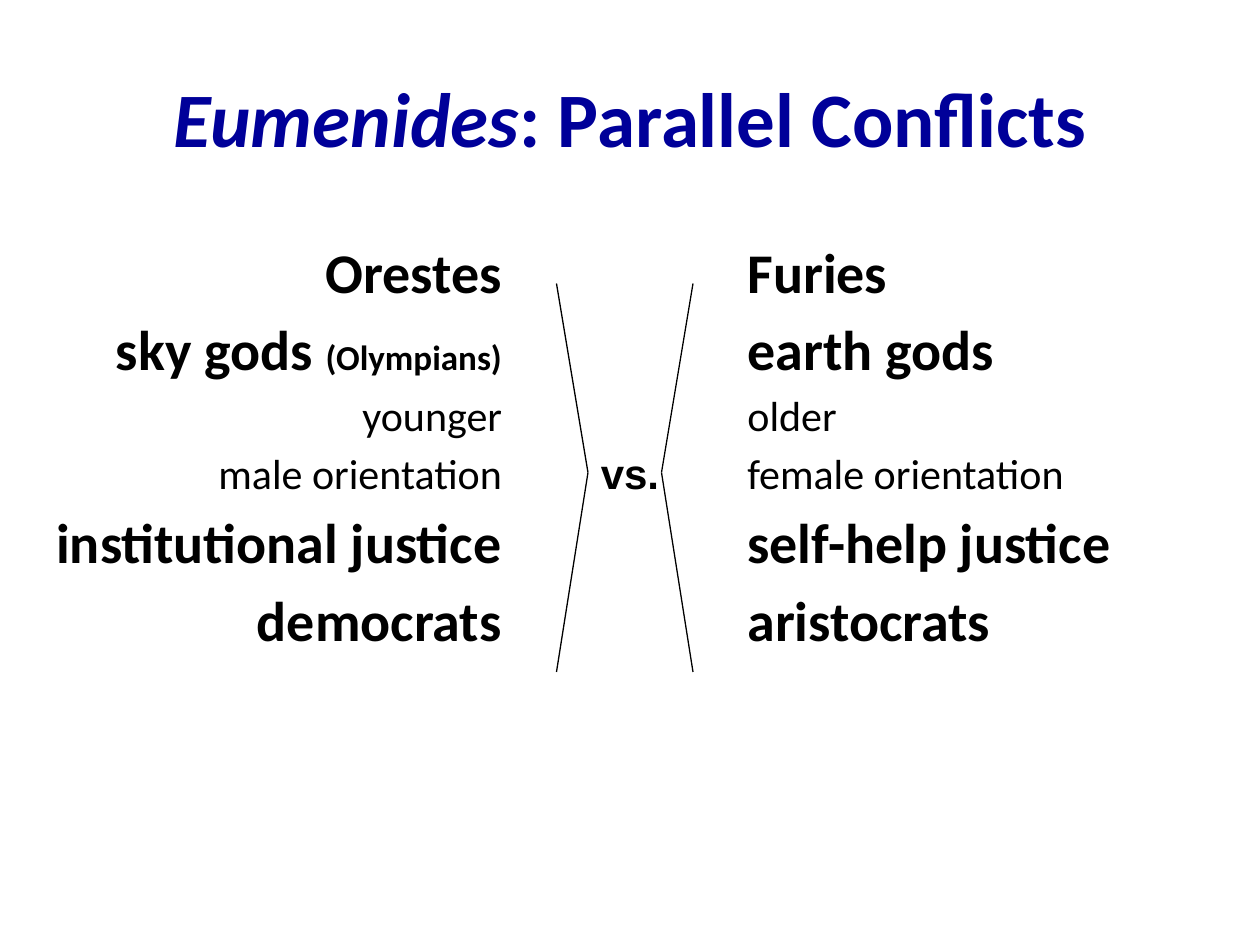
from lxml import etree
from pptx import Presentation
from pptx.dml.color import RGBColor
from pptx.enum.shapes import MSO_CONNECTOR
from pptx.enum.text import MSO_ANCHOR, PP_ALIGN
from pptx.oxml.ns import qn
from pptx.util import Inches, Pt

LEFT, CENTER, RIGHT = PP_ALIGN.LEFT, PP_ALIGN.CENTER, PP_ALIGN.RIGHT
MIDDLE = MSO_ANCHOR.MIDDLE
STRAIGHT = MSO_CONNECTOR.STRAIGHT

COLUMNS, ROWS = 120, 90
SPACE_SHARE = 0.18
NAVY, BLACK = "000099", "000000"

HEADING = {"size": Pt(44), "name": "Calibri", "bold": True}
TOPIC = {"size": Pt(32), "name": "Calibri", "bold": True}
ASIDE = {**TOPIC, "size": Pt(20)}
DETAIL = {"size": Pt(24), "name": "Calibri", "bold": False}
VERSUS = {"size": Pt(24), "name": "Arial", "bold": True}

ORESTES_SIDE = [
    [("Orestes", TOPIC)],
    [("sky gods ", TOPIC), ("(Olympians)", ASIDE)],
    [("younger", DETAIL)],
    [("male orientation", DETAIL)],
    [("institutional justice", TOPIC)],
    [("democrats", TOPIC)],
]
FURIES_SIDE = [
    [("Furies", TOPIC)],
    [("earth gods", TOPIC)],
    [("older", DETAIL)],
    [("female orientation", DETAIL)],
    [("self-help justice", TOPIC)],
    [("aristocrats", TOPIC)],
]


def grid(*cells):
    return [Inches(cell / 12) for cell in cells]


def color(hex_string):
    return RGBColor.from_string(hex_string)


def add_run(paragraph, text, values, hex_string=BLACK):
    run = paragraph.add_run()
    run.text = text
    for name, value in values.items():
        setattr(run.font, name, value)
    run.font.color.rgb = color(hex_string)


def place_title(slide, box):
    title = slide.shapes.title
    title.left, title.top, title.width, title.height = grid(*box)
    title.text_frame.vertical_anchor = MIDDLE
    paragraph = title.text_frame.paragraphs[0]
    paragraph.alignment = CENTER
    add_run(paragraph, "Eumenides", {**HEADING, "italic": True}, NAVY)
    add_run(paragraph, ": Parallel Conflicts", HEADING, NAVY)


def add_side(slide, box, lines, alignment):
    frame = slide.shapes.add_textbox(*grid(*box)).text_frame
    frame.word_wrap = True
    for index, line in enumerate(lines):
        paragraph = frame.add_paragraph() if index else frame.paragraphs[0]
        paragraph.alignment = alignment
        paragraph.space_before = Pt(round(line[0][1]["size"].pt * SPACE_SHARE, 1))
        for text, values in line:
            add_run(paragraph, text, values)


def add_versus(slide, box):
    frame = slide.shapes.add_textbox(*grid(*box)).text_frame
    frame.word_wrap = False
    paragraph = frame.paragraphs[0]
    paragraph.alignment = CENTER
    add_run(paragraph, "vs.", VERSUS)


def add_bracket(slide, outer, tip, top, middle, bottom):
    group = slide.shapes.add_group_shape()
    for end in (top, bottom):
        line = group.shapes.add_connector(STRAIGHT, *grid(outer, end, tip, middle))
        line.line.color.rgb = color(BLACK)
        line.line.width = Pt(0.75)
        etree.SubElement(line._element.spPr, qn("a:effectLst"))


def main():
    presentation = Presentation()
    presentation.slide_width, presentation.slide_height = grid(COLUMNS, ROWS)
    slide = presentation.slides.add_slide(presentation.slide_layouts[5])
    place_title(slide, (6, 3.6, 108, 15))
    add_side(slide, (2, 22, 47, 58), ORESTES_SIDE, RIGHT)
    add_side(slide, (70, 22, 40, 58), FURIES_SIDE, LEFT)
    add_versus(slide, (56, 42, 8, 6))
    for outer, tip in ((53, 56), (66, 63)):
        add_bracket(slide, outer, tip, 27, 45, 64)
    presentation.save("out.pptx")


if __name__ == "__main__":
    main()
